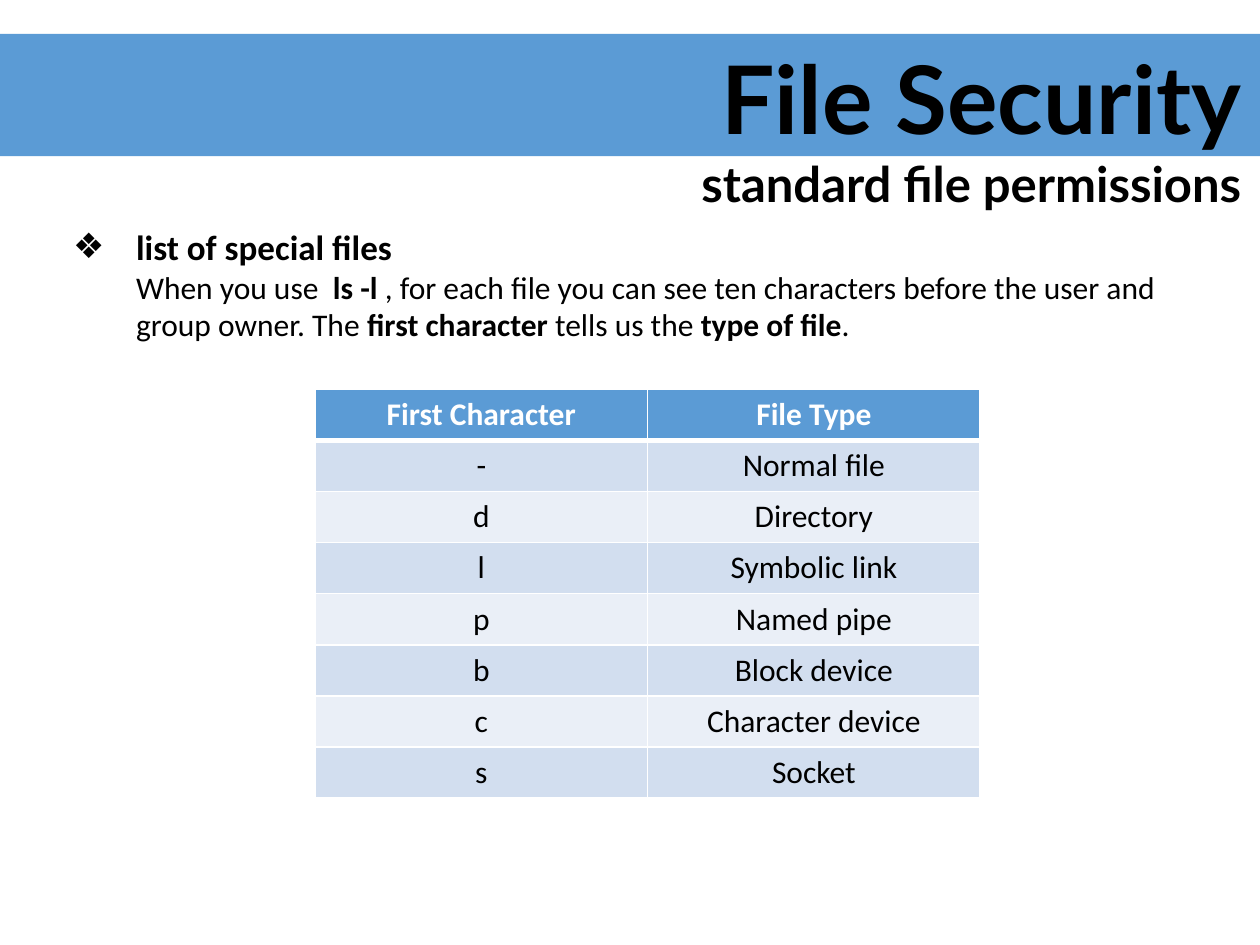
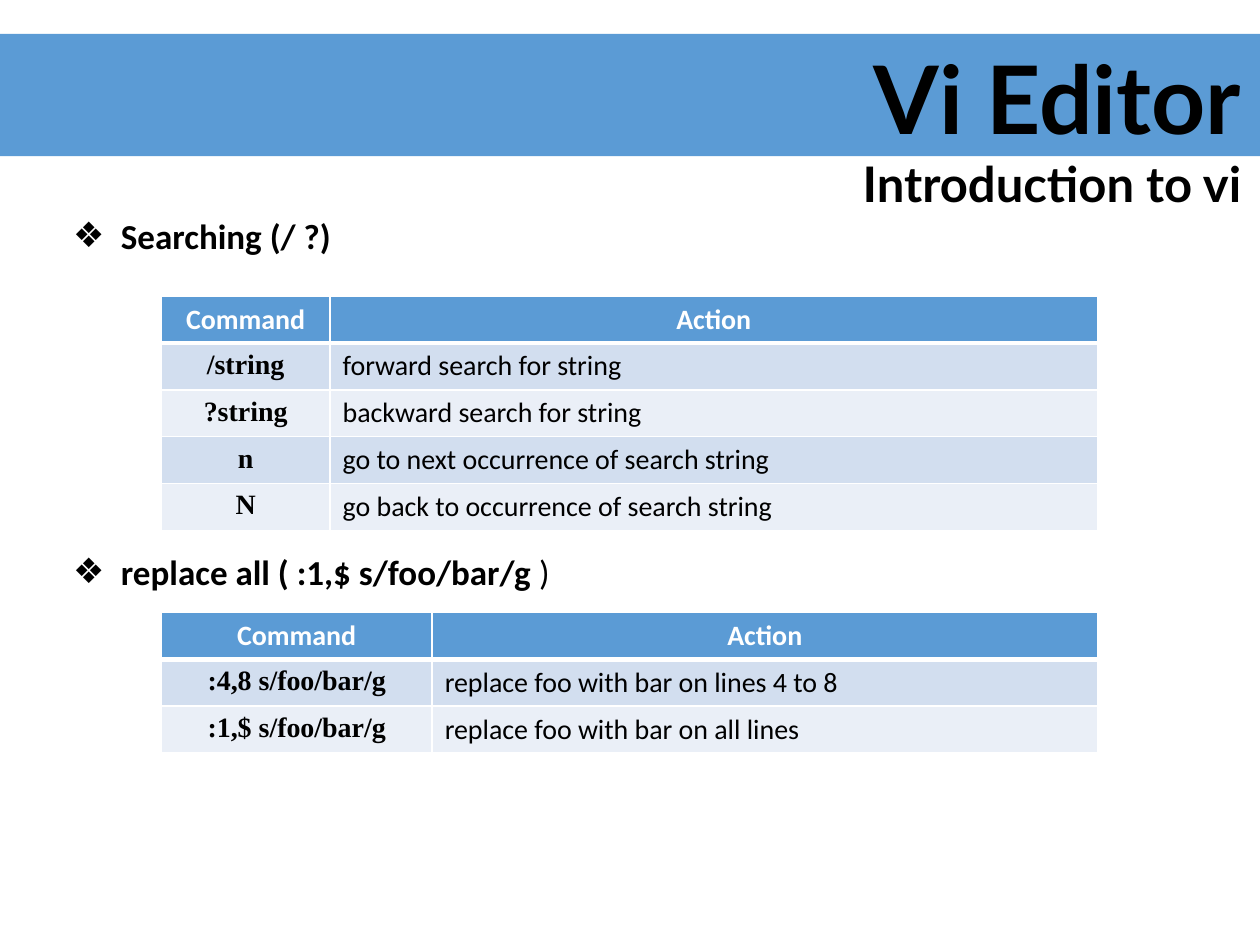
from dataclasses import dataclass

from lxml import etree
from pptx import Presentation
from pptx import util as u
from pptx.dml.color import RGBColor
from pptx.enum import shapes, text
from pptx.oxml import ns


@dataclass(frozen=True)
class Theme:
    accent: str = "5B9BD5"
    bands: tuple = ("D2DEEF", "EAEFF7")
    ink: str = "000000"
    paper: str = "FFFFFF"
    title_font: str = "Lato"
    body_font: str = "Calibri"
    command_font: str = "Times New Roman"
    title_size: int = 54
    subtitle_size: int = 28
    heading_size: int = 20
    body_size: int = 18
    command_size: int = 16
    rule: int = 1
    header_rule: int = 3


def rgb(value):
    return RGBColor.from_string(value)


def add_xml(parent, tag, **attrs):
    return etree.SubElement(parent, ns.qn(tag), {k: str(v) for k, v in attrs.items()})


class Deck:
    def __init__(self, theme):
        self.theme = theme
        self.prs = Presentation()
        self.prs.slide_width = u.Inches(10)
        self.prs.slide_height = u.Inches(7.5)
        self.s = None

    def slide(self, title, subtitle):
        t = self.theme
        self.s = self.prs.slides.add_slide(self.prs.slide_layouts[1])
        sp = self.s.shapes.title
        self.band(sp)
        tf = self.frame(sp, 0.19, 0.27, 9.76, 1.48)
        lines = ((title, t.title_size), (subtitle, t.subtitle_size))
        for i, (line, size) in enumerate(lines):
            p = self.paragraph(tf, i, text.PP_ALIGN.RIGHT)
            self.run(p, line, size, bold=True, font=t.title_font)

    def band(self, title):
        sp = self.s.shapes.add_shape(
            shapes.MSO_SHAPE.RECTANGLE, 0, u.Inches(0.27), u.Inches(10), u.Inches(0.97))
        sp.shadow.inherit = False
        sp.fill.solid()
        sp.fill.fore_color.rgb = rgb(self.theme.accent)
        sp.line.fill.background()
        title._element.addprevious(sp._element)

    def frame(self, sp, left, top, width, height):
        sp.left, sp.top = u.Inches(left), u.Inches(top)
        sp.width, sp.height = u.Inches(width), u.Inches(height)
        tf = sp.text_frame
        tf.word_wrap = True
        tf.auto_size = text.MSO_AUTO_SIZE.NONE
        tf.vertical_anchor = text.MSO_ANCHOR.TOP
        return tf

    def paragraph(self, tf, index, align, before=0):
        p = tf.add_paragraph() if index else tf.paragraphs[0]
        p.alignment = align
        p.line_spacing = 1.0
        p.space_before, p.space_after = u.Pt(before), u.Pt(0)
        return p

    def run(self, p, words, size, bold=False, font=None, color=None):
        r = p.add_run()
        r.text = words
        r.font.size = u.Pt(size)
        r.font.bold = bold
        r.font.name = font or self.theme.body_font
        r.font.color.rgb = rgb(color or self.theme.ink)

    def body(self, top, height, indent, items):
        t = self.theme
        tf = self.frame(self.s.placeholders[1], 0.48, top, 9.34, height)
        for i, (level, before, runs) in enumerate(items):
            p = self.paragraph(tf, i, text.PP_ALIGN.LEFT, before)
            p.level = level
            pPr = p._p.get_or_add_pPr()
            pPr.set("marL", str(u.Inches(indent)))
            pPr.set("indent", str(0 if level else -u.Inches(indent)))
            if level:
                add_xml(pPr, "a:buNone")
            else:
                add_xml(pPr, "a:buChar", char="❖")
            for words, bold in runs:
                self.run(p, words, t.body_size if level else t.heading_size, bold)

    def borders(self, cell, top, bottom):
        tcPr = cell._tc.get_or_add_tcPr()
        rule = self.theme.rule
        for side, width in zip("LRTB", (rule, rule, top, bottom)):
            ln = add_xml(tcPr, f"a:ln{side}", w=u.Pt(width))
            add_xml(add_xml(ln, "a:solidFill"), "a:srgbClr", val=self.theme.paper)

    def table(self, left, top, height, widths, rows, size, commands=False):
        t = self.theme
        table = self.s.shapes.add_table(
            len(rows), len(widths), u.Inches(left), u.Inches(top),
            u.Inches(sum(widths)), u.Inches(height)).table
        for column, width in zip(table.columns, widths):
            column.width = u.Inches(width)
        for i, row in enumerate(rows):
            table.rows[i].height = u.Inches(height / len(rows))
            header = i == 0
            for j, words in enumerate(row):
                cell = table.cell(i, j)
                self.borders(cell, t.header_rule if i == 1 else t.rule,
                             t.header_rule if header else t.rule)
                cell.fill.solid()
                cell.fill.fore_color.rgb = rgb(t.accent if header else t.bands[(i - 1) % 2])
                command = commands and not header and j == 0
                action = commands and not header and j == 1
                align = text.PP_ALIGN.LEFT if action else text.PP_ALIGN.CENTER
                p = self.paragraph(cell.text_frame, 0, align)
                self.run(p, words, size, header or command,
                         t.command_font if command else t.body_font,
                         t.paper if header else t.ink)


def file_security(deck):
    deck.slide("File Security", "standard file permissions")
    deck.body(1.74, 4.68, 0.5, [
        (0, 0, [("list of special files", True)]),
        (1, 0, [
            ("When you use  ", False),
            ("ls -l", True),
            (" , for each file you can see ten characters before the user and "
             "group owner. The ", False),
            ("first character ", True),
            ("tells us the ", False),
            ("type of file", True),
            (".", False),
        ]),
    ])
    deck.table(2.5, 3.09, 3.2, (2.64, 2.64), [
        ("First Character", "File Type"),
        ("-", "Normal file"),
        ("d", "Directory"),
        ("l", "Symbolic link"),
        ("p", "Named pipe"),
        ("b", "Block device"),
        ("c", "Character device"),
        ("s", "Socket"),
    ], deck.theme.body_size)


def vi_editor(deck):
    size = deck.theme.command_size
    header = ("Command", "Action")
    deck.slide("Vi Editor", "Introduction to vi")
    deck.body(1.65, 3.55, 0.38, [
        (0, 0, [("Searching (/ ?)", True)]),
        (0, 168, [("replace all ( :1,$ s/foo/bar/g ", True), (")", False)]),
    ])
    deck.table(1.28, 2.35, 1.83, (1.34, 6.09), [
        header,
        ("/string", "forward search for string"),
        ("?string", "backward search for string"),
        ("n", "go to next occurrence of search string"),
        ("N", "go back to occurrence of search string"),
    ], size, commands=True)
    deck.table(1.28, 4.86, 1.1, (2.15, 5.28), [
        header,
        (":4,8 s/foo/bar/g", "replace foo with bar on lines 4 to 8"),
        (":1,$ s/foo/bar/g", "replace foo with bar on all lines"),
    ], size, commands=True)


def main():
    deck = Deck(Theme())
    file_security(deck)
    vi_editor(deck)
    deck.prs.save("out.pptx")


if __name__ == "__main__":
    main()
